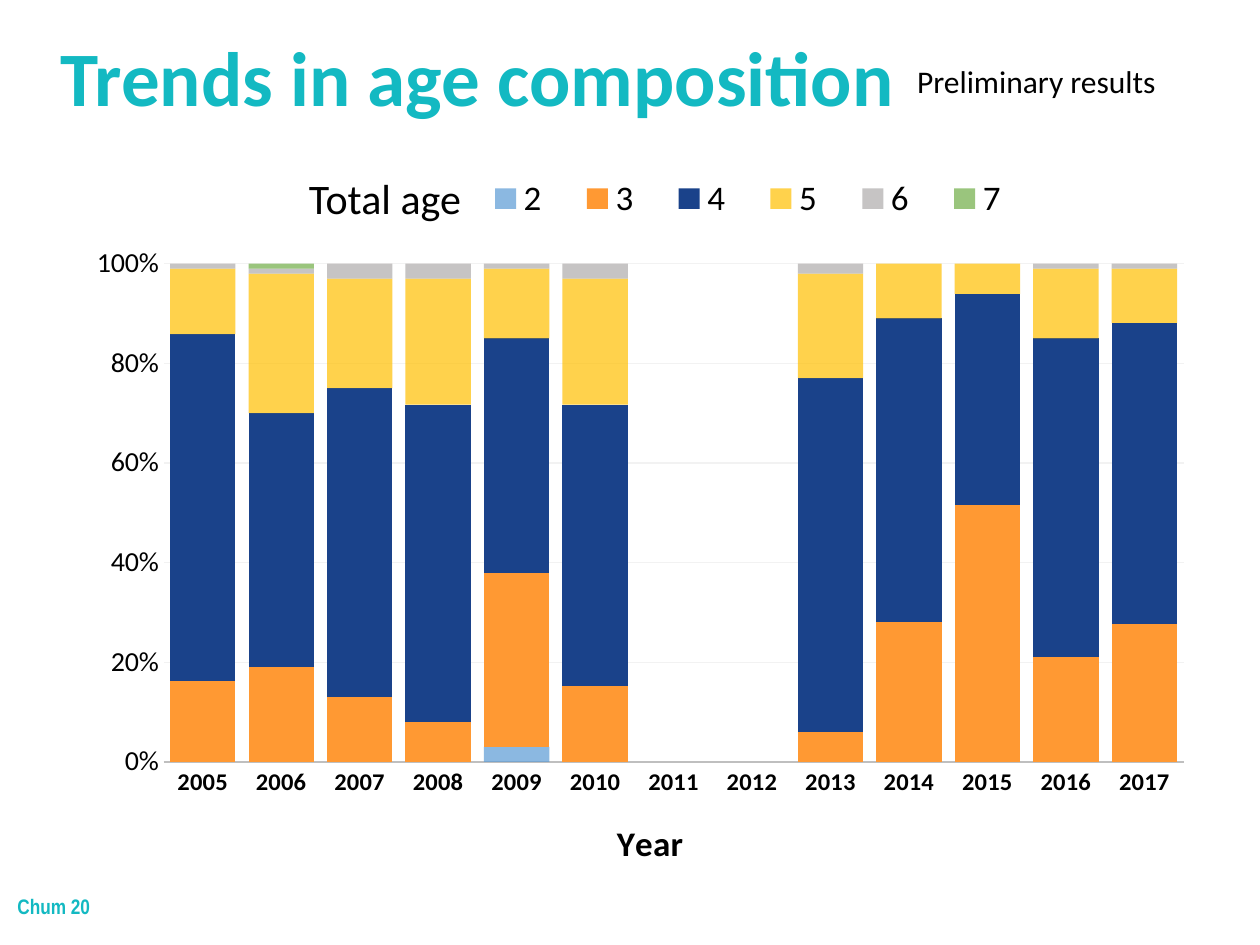
from lxml import etree
from pptx import Presentation
from pptx.chart.data import CategoryChartData
from pptx.dml.color import RGBColor
from pptx.enum.chart import XL_CHART_TYPE, XL_LEGEND_POSITION, XL_TICK_MARK
from pptx.enum.text import MSO_ANCHOR
from pptx.oxml.ns import qn
from pptx.util import Pt

STACKED = XL_CHART_TYPE.COLUMN_STACKED_100
LEGEND_BOTTOM = XL_LEGEND_POSITION.BOTTOM
NO_TICK = XL_TICK_MARK.NONE
TOP, MIDDLE, BOTTOM = MSO_ANCHOR.TOP, MSO_ANCHOR.MIDDLE, MSO_ANCHOR.BOTTOM

TEAL, BLACK = "13B9C2", "000000"
YEARS = [str(year) for year in range(2005, 2018)]
# Total age, fill, opacity in percent, share of each year in percent
AGE_CLASSES = [
    ("2", "5B9BD5", 70, [0, 0, 0, 0, 3, 0, None, None, 0, 0, 0, 0, 0]),
    ("3", "FF9933", 100, [16, 19, 13, 8, 35, 15, None, None, 6, 28, 51, 21, 28]),
    ("4", "1A428A", 100, [69, 51, 62, 63, 47, 56, None, None, 71, 61, 42, 64, 61]),
    ("5", "FFC000", 70, [13, 28, 22, 25, 14, 25, None, None, 21, 11, 6, 14, 11]),
    ("6", "AFABAB", 70, [1, 1, 3, 3, 1, 3, None, None, 2, 0, 0, 1, 1]),
    ("7", "70AD47", 70, [0, 1, 0, 0, 0, 0, None, None, None, 0, 0, None, None]),
]


def color(hex_string):
    return RGBColor.from_string(hex_string)


def format_font(font, size, hex_color=BLACK, bold=False, name="Calibri"):
    font.size, font.bold, font.name = Pt(size), bold, name
    font.color.rgb = color(hex_color)


def add_text(slide, text, left, top, width, height, anchor=TOP, margin=0,
             wrap=True, line_spacing=1.0, **font_format):
    box = slide.shapes.add_textbox(Pt(left), Pt(top), Pt(width), Pt(height))
    frame = box.text_frame
    frame.word_wrap, frame.vertical_anchor = wrap, anchor
    frame.margin_left = frame.margin_right = Pt(margin)
    frame.margin_top = frame.margin_bottom = Pt(margin / 2)
    paragraph = frame.paragraphs[0]
    paragraph.line_spacing = line_spacing
    run = paragraph.add_run()
    run.text = text
    format_font(run.font, **font_format)


def set_layout(element, index, **fractions):
    """Place a chart part by fractions of the chart area."""
    for old_layout in element.findall(qn("c:layout")):
        element.remove(old_layout)
    layout = etree.Element(qn("c:layout"))
    element.insert(index, layout)
    manual = etree.SubElement(layout, qn("c:manualLayout"))
    if element.tag == qn("c:plotArea"):
        etree.SubElement(manual, qn("c:layoutTarget"), val="inner")
    for key in ("x", "y"):
        etree.SubElement(manual, qn(f"c:{key}Mode"), val="edge")
    for key, value in fractions.items():
        etree.SubElement(manual, qn(f"c:{key}"), val=str(value))


def fill_series(series, hex_color, opacity):
    fill = series.format.fill
    fill.solid()
    fill.fore_color.rgb = color(hex_color)
    if opacity < 100:
        rgb = series._element.find(".//" + qn("a:srgbClr"))
        etree.SubElement(rgb, qn("a:alpha"), val=str(opacity * 1000))


def format_line(line, hex_color):
    line.color.rgb = color(hex_color)
    line.width = Pt(0.75)


def format_axes(chart):
    years, shares = chart.category_axis, chart.value_axis
    for axis in (years, shares):
        axis.major_tick_mark = axis.minor_tick_mark = NO_TICK
    format_font(years.tick_labels.font, 14, bold=True)
    format_line(years.format.line, "BFBFBF")
    title = years.axis_title
    title.text_frame.text = "Year"
    format_font(title.text_frame.paragraphs[0].runs[0].font, 20, bold=True)
    set_layout(title._element, 1, x=0.48, y=0.93)

    format_font(shares.tick_labels.font, 16)
    shares.tick_labels.number_format = "0%"
    shares.tick_labels.number_format_is_linked = False
    shares.minimum_scale, shares.maximum_scale, shares.major_unit = 0, 1, 0.2
    shares.format.line.fill.background()
    format_line(shares.major_gridlines.format.line, "F2F2F2")


def add_age_chart(slide, left, top, width, height):
    data = CategoryChartData()
    data.categories = YEARS
    for age, _, _, shares in AGE_CLASSES:
        data.add_series(age, shares)
    chart = slide.shapes.add_chart(
        STACKED, Pt(left), Pt(top), Pt(width), Pt(height), data).chart
    chart.has_title = False
    format_font(chart.font, 16)
    plot = chart.plots[0]
    plot.gap_width, plot.overlap, plot.vary_by_categories = 20, 100, False
    for series, (_, fill, opacity, _) in zip(plot.series, AGE_CLASSES):
        fill_series(series, fill, opacity)
    format_axes(chart)
    set_layout(chart._chartSpace.chart.plotArea, 0, x=0.09, y=0.17, w=0.89, h=0.69)

    chart.has_legend = True
    legend = chart.legend
    legend.position, legend.include_in_layout = LEGEND_BOTTOM, False
    format_font(legend.font, 20)
    set_layout(legend._element, 1, x=0.35, y=0.04, w=0.5, h=0.08)


def main():
    presentation = Presentation()
    presentation.slide_width, presentation.slide_height = Pt(720), Pt(540)
    slide = presentation.slides.add_slide(presentation.slide_layouts[6])
    add_text(slide, "Chum 20", 10, 496, 44, 44, anchor=MIDDLE, wrap=False,
             size=12, hex_color=TEAL, bold=True, name="Arial Narrow")
    add_text(slide, "Trends in age composition", 34.5, 23, 634.5, 47.5,
             anchor=BOTTOM, line_spacing=0.9, size=44, hex_color=TEAL, bold=True)
    add_text(slide, "Total age", 176.5, 103, 103, 25, line_spacing=0.85, size=24)
    add_age_chart(slide, 34.5, 80.5, 655, 420)
    add_text(slide, "Preliminary results", 517, 32, 152, 29, margin=7.2,
             wrap=False, size=18)
    presentation.save("out.pptx")


if __name__ == "__main__":
    main()
